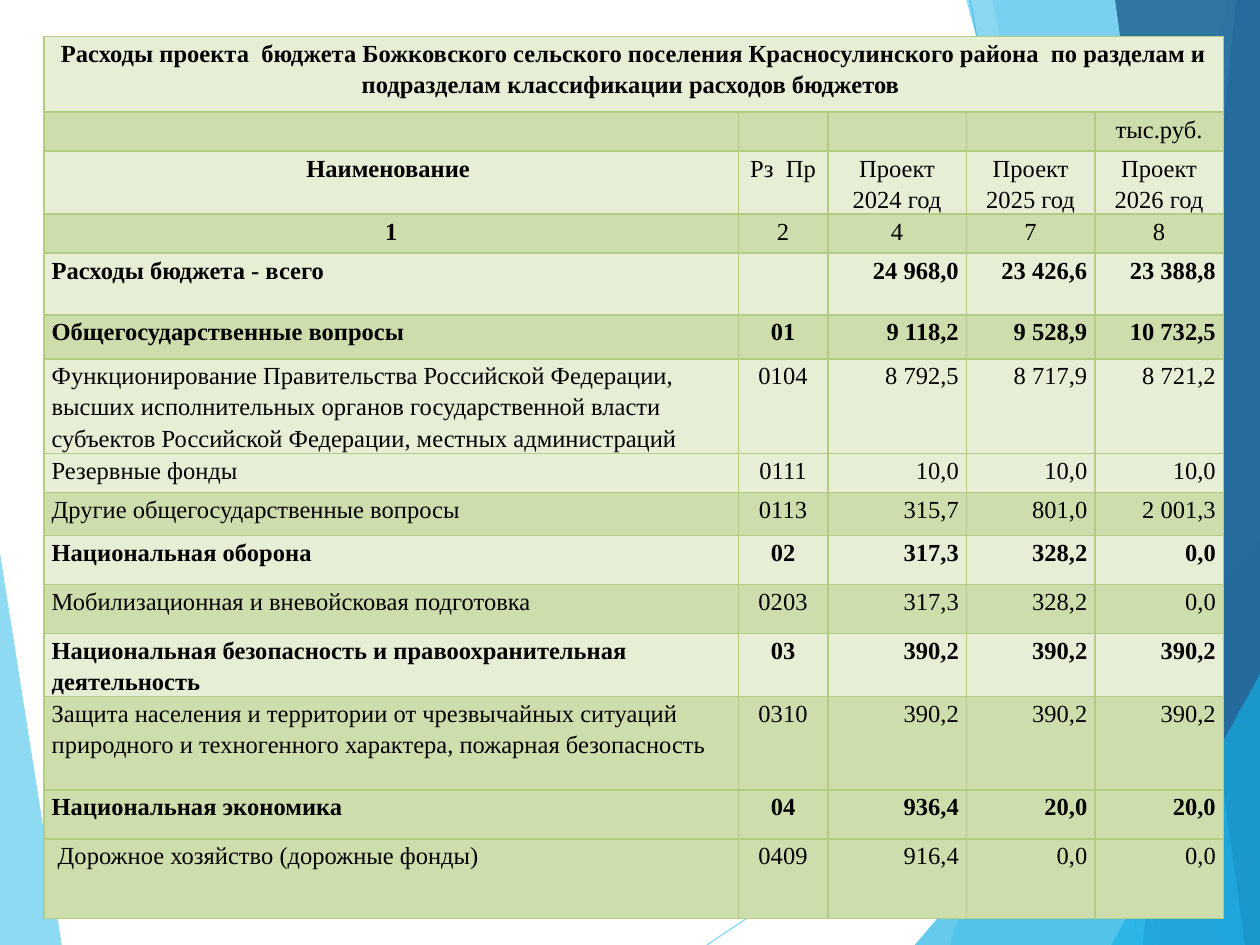
import dataclasses

import lxml.etree
import pptx
import pptx.dml.color
import pptx.enum.shapes
import pptx.enum.text
import pptx.oxml.ns
import pptx.util

RGBColor = pptx.dml.color.RGBColor
PP_ALIGN = pptx.enum.text.PP_ALIGN
SKY = RGBColor(0x5F, 0xCB, 0xEF)
CYAN = RGBColor(0x17, 0xB0, 0xE4)
BLUE = RGBColor(0x2E, 0x83, 0xC3)
NAVY = RGBColor(0x22, 0x62, 0x92)
PALE = RGBColor(0xE6, 0xEE, 0xD5)
GREEN = RGBColor(0xCD, 0xDD, 0xAC)
BORDER = RGBColor(0xB3, 0xCC, 0x82)
BLACK = RGBColor(0, 0, 0)

SLIDE_W = pptx.util.Inches(10)
SLIDE_H = pptx.util.Inches(7.5)
GRID_COLS, GRID_ROWS = 1000, 750
UNIT = SLIDE_W // GRID_COLS

Point = tuple[int, int]
L, C, R = PP_ALIGN.LEFT, PP_ALIGN.CENTER, PP_ALIGN.RIGHT
HEADER_ALIGN = (C, C, C, C, C)
DATA_ALIGN = (L, C, R, R, R)


@dataclasses.dataclass
class Facet:
    points: list[Point]
    color: RGBColor
    opacity: int


@dataclasses.dataclass
class Ray:
    start: Point
    end: Point


@dataclasses.dataclass
class Row:
    height: int
    fill: RGBColor
    texts: tuple[str, ...]
    bold_cells: int = 0
    aligns: tuple = DATA_ALIGN


RAYS = [Ray((561, 750), (1000, 457)), Ray((770, 0), (904, 750))]
FACETS = [
    Facet([(0, 439), (49, 750), (0, 750)], SKY, 70),
    Facet([(975, 0), (754, 750), (1000, 750), (1000, 0)], SKY, 36),
    Facet([(788, 0), (919, 750), (1000, 750), (1000, 0)], SKY, 20),
    Facet([(726, 750), (1000, 429), (1000, 750)], CYAN, 66),
    Facet([(767, 0), (970, 750), (1000, 750), (1000, 0)], CYAN, 50),
    Facet([(981, 0), (907, 750), (1000, 750), (1000, 0)], BLUE, 70),
    Facet([(885, 0), (988, 750), (1000, 750), (1000, 0)], NAVY, 82),
    Facet([(882, 750), (1000, 535), (1000, 750)], CYAN, 66),
]

TABLE_LEFT, TABLE_TOP = 35, 29
COLUMNS = (551, 71, 110, 102, 102)
ROWS = [
    Row(60, PALE, ("Расходы проекта  бюджета Божковского сельского поселения "
                   "Красносулинского района  по разделам и подразделам "
                   "классификации расходов бюджетов ",), 1, HEADER_ALIGN),
    Row(31, GREEN, ("", "", "", "", "тыс.руб."), 0, HEADER_ALIGN),
    Row(50, PALE, ("Наименование ", "Рз  Пр", "Проект 2024 год",
                   "Проект 2025 год", "Проект 2026 год"), 1, HEADER_ALIGN),
    Row(31, GREEN, ("1", "2", "4", "7", "8"), 1, HEADER_ALIGN),
    Row(49, PALE, ("Расходы бюджета - всего", "", "24 968,0", "23 426,6", "23 388,8"), 5),
    Row(35, GREEN, ("Общегосударственные вопросы", "01", "9 118,2", "9 528,9", "10 732,5"), 5),
    Row(75, PALE, ("Функционирование Правительства Российской Федерации, высших "
                   "исполнительных органов государственной власти субъектов "
                   "Российской Федерации, местных администраций",
                   "0104", "8 792,5", "8 717,9", "8 721,2")),
    Row(31, PALE, ("Резервные фонды", "0111", "10,0", "10,0", "10,0")),
    Row(34, GREEN, ("Другие общегосударственные вопросы", "0113", "315,7", "801,0", "2 001,3")),
    Row(39, PALE, ("Национальная оборона", "02", "317,3", "328,2", "0,0"), 5),
    Row(39, GREEN, ("Мобилизационная и вневойсковая подготовка",
                    "0203", "317,3", "328,2", "0,0")),
    Row(50, PALE, ("Национальная безопасность и правоохранительная деятельность",
                   "03", "390,2", "390,2", "390,2"), 5),
    Row(74, GREEN, ("Защита населения и территории от чрезвычайных ситуаций природного "
                    "и техногенного характера, пожарная безопасность",
                    "0310", "390,2", "390,2", "390,2")),
    Row(39, GREEN, ("Национальная экономика", "04", "936,4", "20,0", "20,0"), 5),
    Row(63, GREEN, (" Дорожное хозяйство (дорожные фонды)", "0409", "916,4", "0,0", "0,0")),
]


def add_child(parent, tag: str, **attributes: str):
    return lxml.etree.SubElement(parent, pptx.oxml.ns.qn(tag), **attributes)


def set_opacity(s, percent: int) -> None:
    for color in s._element.spPr.iter(pptx.oxml.ns.qn("a:srgbClr")):
        add_child(color, "a:alpha", val=str(percent * 1000))


def draw_facet(slide, facet: Facet) -> None:
    builder = slide.shapes.build_freeform(*facet.points[0], scale=UNIT)
    builder.add_line_segments(facet.points[1:], close=True)
    s = builder.convert_to_shape()
    s.shadow.inherit = False
    s.fill.solid()
    s.fill.fore_color.rgb = facet.color
    s.line.fill.background()
    set_opacity(s, facet.opacity)


def draw_ray(slide, ray: Ray) -> None:
    ends = [UNIT * n for n in ray.start + ray.end]
    s = slide.shapes.add_connector(pptx.enum.shapes.MSO_CONNECTOR.STRAIGHT, *ends)
    s.line.color.rgb = SKY
    s.line.width = pptx.util.Pt(0.75)
    set_opacity(s, 70)
    add_child(s._element.spPr, "a:effectLst")


def style_cell(cell, fill: RGBColor) -> None:
    cell.margin_left = cell.margin_right = pptx.util.Inches(0.06)
    cell.margin_top = cell.margin_bottom = 0
    tc_pr = cell._tc.get_or_add_tcPr()
    for side in ("a:lnL", "a:lnR", "a:lnT", "a:lnB"):
        ln = add_child(tc_pr, side, w=str(pptx.util.Pt(1)))
        add_child(add_child(ln, "a:solidFill"), "a:srgbClr", val=str(BORDER))
    cell.fill.solid()
    cell.fill.fore_color.rgb = fill


def write_cell(cell, text: str, align, bold: bool) -> None:
    p = cell.text_frame.paragraphs[0]
    p.alignment = align
    p.line_spacing = 1.15
    r = p.add_run()
    r.text = text
    r.font.name = "Times New Roman"
    r.font.size = pptx.util.Pt(14)
    r.font.bold = bold
    r.font.color.rgb = BLACK


def draw_table(slide, rows: list[Row]) -> None:
    width = UNIT * sum(COLUMNS)
    height = UNIT * sum(row.height for row in rows)
    table = slide.shapes.add_table(len(rows), len(COLUMNS), UNIT * TABLE_LEFT,
                                   UNIT * TABLE_TOP, width, height).table
    table.first_row = table.horz_banding = False
    for column, units in zip(table.columns, COLUMNS):
        column.width = UNIT * units
    for i, row in enumerate(rows):
        table.rows[i].height = UNIT * row.height
        for cell in table.rows[i].cells:
            style_cell(cell, row.fill)
        for j, text in enumerate(row.texts):
            if text:
                write_cell(table.cell(i, j), text, row.aligns[j], j < row.bold_cells)
    table.cell(0, 0).merge(table.cell(0, len(COLUMNS) - 1))


def main() -> None:
    prs = pptx.Presentation()
    prs.slide_width, prs.slide_height = SLIDE_W, SLIDE_H
    slide = prs.slides.add_slide(prs.slide_layouts[6])
    draw_facet(slide, FACETS[0])
    for ray in RAYS:
        draw_ray(slide, ray)
    for facet in FACETS[1:]:
        draw_facet(slide, facet)
    draw_table(slide, ROWS)
    prs.save("out.pptx")


if __name__ == "__main__":
    main()
